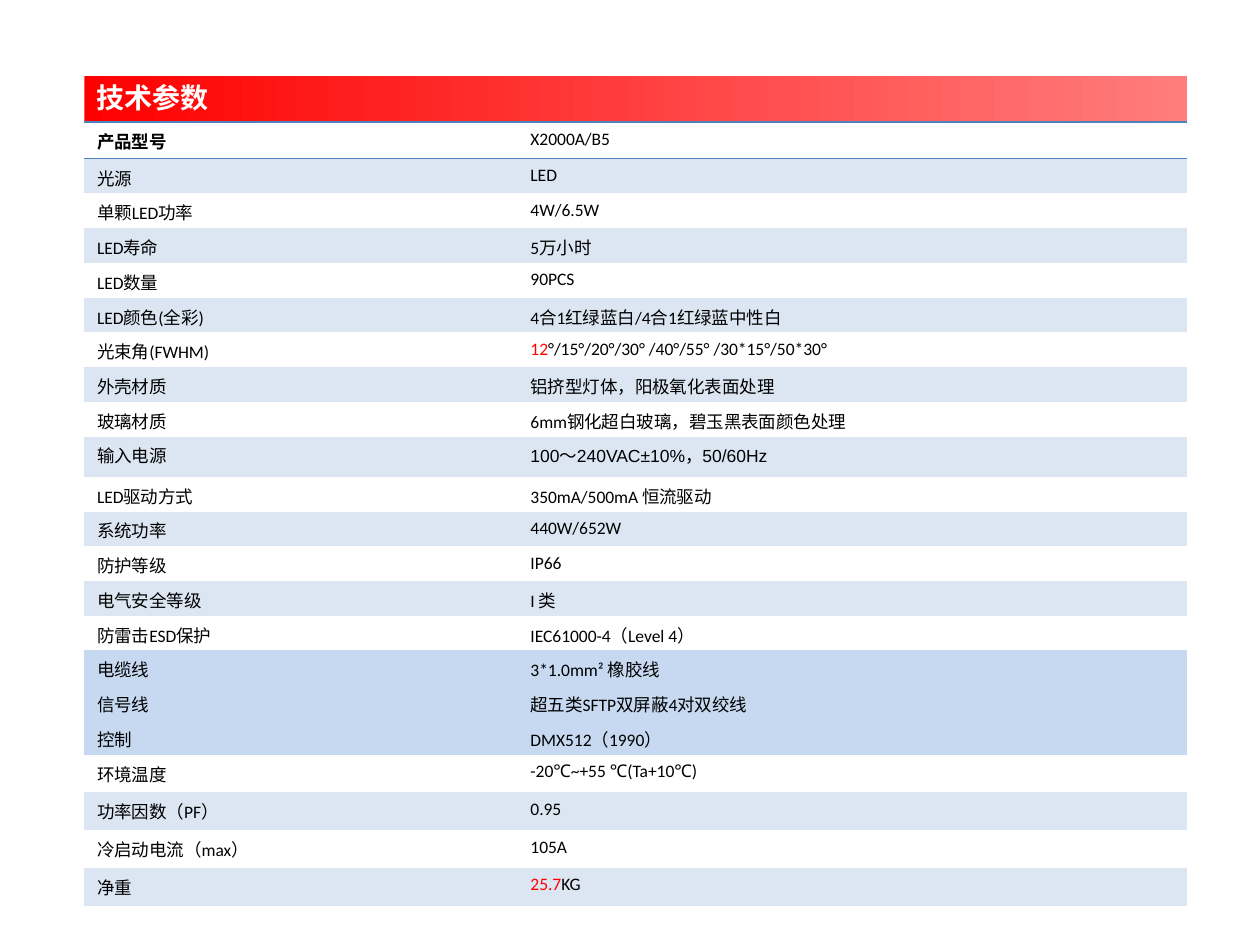
"""Build a one-slide sheet of technical parameters for a light fitting."""
from lxml.etree import SubElement
from pptx import Presentation
from pptx.dml.color import RGBColor
from pptx.enum.shapes import MSO_SHAPE
from pptx.enum.text import MSO_ANCHOR, PP_ALIGN
from pptx.oxml import parse_xml
from pptx.oxml.ns import nsdecls, qn
from pptx.util import Inches, Pt

CJK = "Noto Sans CJK SC"
NO_STYLE = "{2D5ABB26-0587-4C30-8999-92F81FD0307C}"
PALE, BLUE, RED, BLACK, RULE = "DCE6F2", "C6D9F1", "FF0000", "000000", "4F81BD"
LEFT, TOP, WIDTH = 0.67, 0.6, 8.75
TITLE_HEIGHT, TABLE_HEIGHT = 0.37, 6.22
LABEL_WIDTH = 3.44
HEADER_ROW, POWER_ROW, TALL_ROW, TALL_COUNT = 0.29, 0.32, 0.3, 4

rows = [
    ("产品型号", "X2000A/B5", None),
    ("光源", "LED", PALE),
    ("单颗LED功率", "4W/6.5W", None),
    ("LED寿命", "5万小时", PALE),
    ("LED数量", "90PCS", None),
    ("LED颜色(全彩)", "4合1红绿蓝白/4合1红绿蓝中性白", PALE),
    ("光束角(FWHM)", "12|°/15°/20°/30° /40°/55° /30*15°/50*30°", None),
    ("外壳材质", "铝挤型灯体，阳极氧化表面处理", PALE),
    ("玻璃材质", "6mm钢化超白玻璃，碧玉黑表面颜色处理", None),
    ("输入电源", "100～240VAC±10%，50/60Hz", PALE),
    ("LED驱动方式", "350mA/500mA 恒流驱动", None),
    ("系统功率", "440W/652W", PALE),
    ("防护等级", "IP66", None),
    ("电气安全等级", "I 类", PALE),
    ("防雷击ESD保护", "IEC61000-4（Level 4）", None),
    ("电缆线", "3*1.0mm² 橡胶线", BLUE),
    ("信号线", "超五类SFTP双屏蔽4对双绞线", BLUE),
    ("控制", "DMX512（1990）", BLUE),
    ("环境温度", "-20℃~+55 ℃(Ta+10℃)", None),
    ("功率因数（PF）", "0.95", PALE),
    ("冷启动电流（max）", "105A", None),
    ("净重", "25.7|KG", PALE),
]
fonts = {("玻璃材质", 0): CJK, ("输入电源", 0): CJK, ("输入电源", 1): "Arial"}


def rgb(value):
    return RGBColor.from_string(value)


def add_span(para, text, color, **formats):
    span = para.add_run()
    span.text = text
    for name, value in formats.items():
        setattr(span.font, name, value)
    span.font.color.rgb = rgb(color)
    SubElement(span.font._element, qn("a:ea"), typeface=CJK)


deck = Presentation()
deck.slide_width, deck.slide_height = Inches(10), Inches(7.5)
page = deck.slides.add_slide(deck.slide_layouts[6])

banner = page.shapes.add_shape(
    MSO_SHAPE.RECTANGLE, Inches(LEFT), Inches(TOP), Inches(WIDTH), Inches(TITLE_HEIGHT))
banner.shadow.inherit = False
banner.line.fill.background()
banner.fill.gradient()
banner.fill.gradient_angle = 0
for stop, color, position in zip(banner.fill.gradient_stops, (RED, "FF7D7D"), (0, 1)):
    stop.color.rgb = rgb(color)
    stop.position = position
frame_formats = {"margin_top": 0, "margin_bottom": Inches(0.02), "word_wrap": True,
                 "vertical_anchor": MSO_ANCHOR.MIDDLE}
for name, value in frame_formats.items():
    setattr(banner.text_frame, name, value)
title = banner.text_frame.paragraphs[0]
title.alignment = PP_ALIGN.LEFT
add_span(title, "技术参数", "FFFFFF", name=CJK, size=Pt(16), bold=True)

grid = page.shapes.add_table(
    len(rows), 2, Inches(LEFT), Inches(TOP + TITLE_HEIGHT), Inches(WIDTH), Inches(TABLE_HEIGHT))
table = grid.table
table.first_row = table.horz_banding = False
table._tbl.tblPr.find(qn("a:tableStyleId")).text = NO_STYLE
for column, width in zip(table.columns, (LABEL_WIDTH, WIDTH - LABEL_WIDTH)):
    column.width = Inches(width)

tall_start = len(rows) - TALL_COUNT
plain_height = TABLE_HEIGHT - HEADER_ROW - POWER_ROW - TALL_COUNT * TALL_ROW
plain_row = plain_height / (tall_start - 2)
special_rows = {"产品型号": HEADER_ROW, "输入电源": POWER_ROW}

for row_index, (label, detail, shade) in enumerate(rows):
    usual = TALL_ROW if row_index >= tall_start else plain_row
    table.rows[row_index].height = Inches(special_rows.get(label, usual))
    for column_index, text in enumerate((label, detail)):
        cell = table.cell(row_index, column_index)
        cell.margin_bottom = Inches(0.02)
        if shade:
            cell.fill.solid()
            cell.fill.fore_color.rgb = rgb(shade)
        else:
            cell.fill.background()
        parts = text.split("|")
        colors = (RED, BLACK) if len(parts) == 2 else (BLACK,)
        for part, color in zip(parts, colors):
            add_span(cell.text_frame.paragraphs[0], part, color, size=Pt(10),
                     name=fonts.get((label, column_index), "Calibri"),
                     bold=row_index == 0 and column_index == 0)
        edges = ("lnT", "lnB") if row_index == 0 else ()
        for position, edge in enumerate(edges):
            cell._tc.get_or_add_tcPr().insert(position, parse_xml(
                f'<a:{edge} {nsdecls("a")} w="{Pt(1)}"><a:solidFill>'
                f'<a:srgbClr val="{RULE}"/></a:solidFill></a:{edge}>'))

deck.save("out.pptx")
